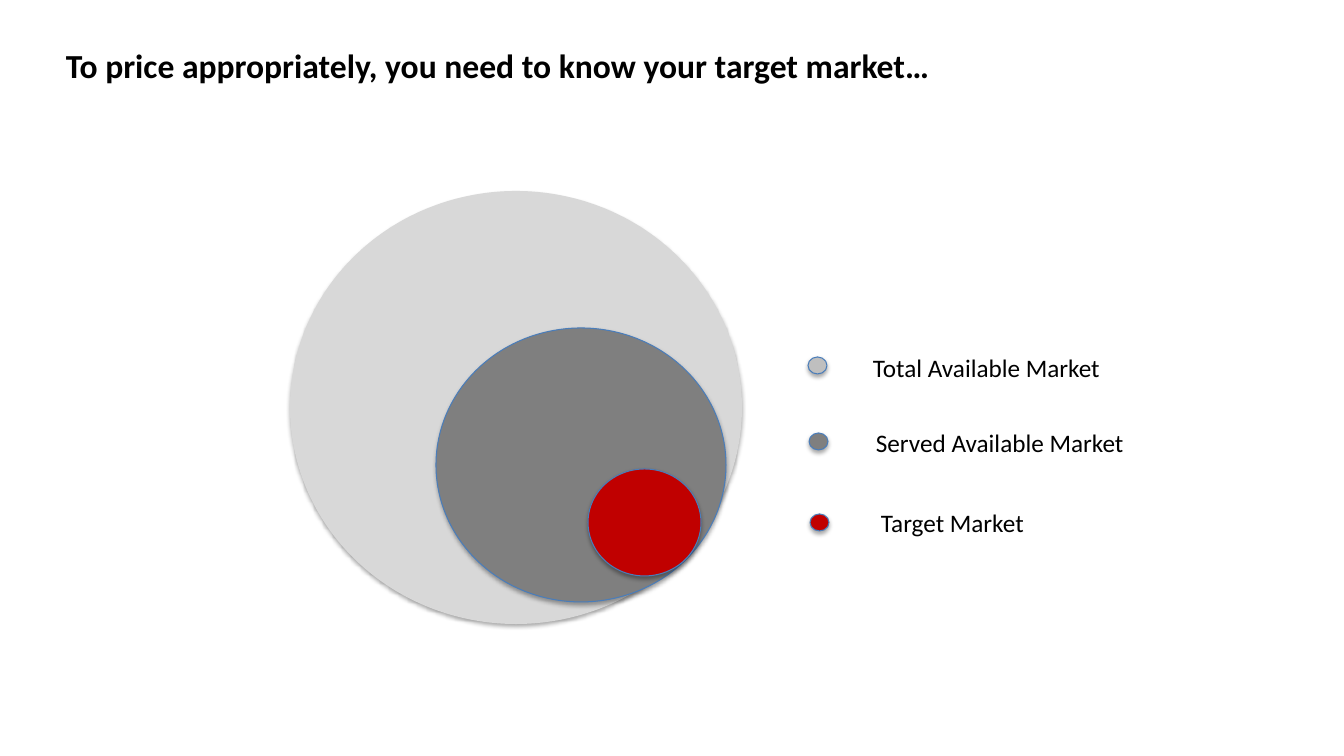
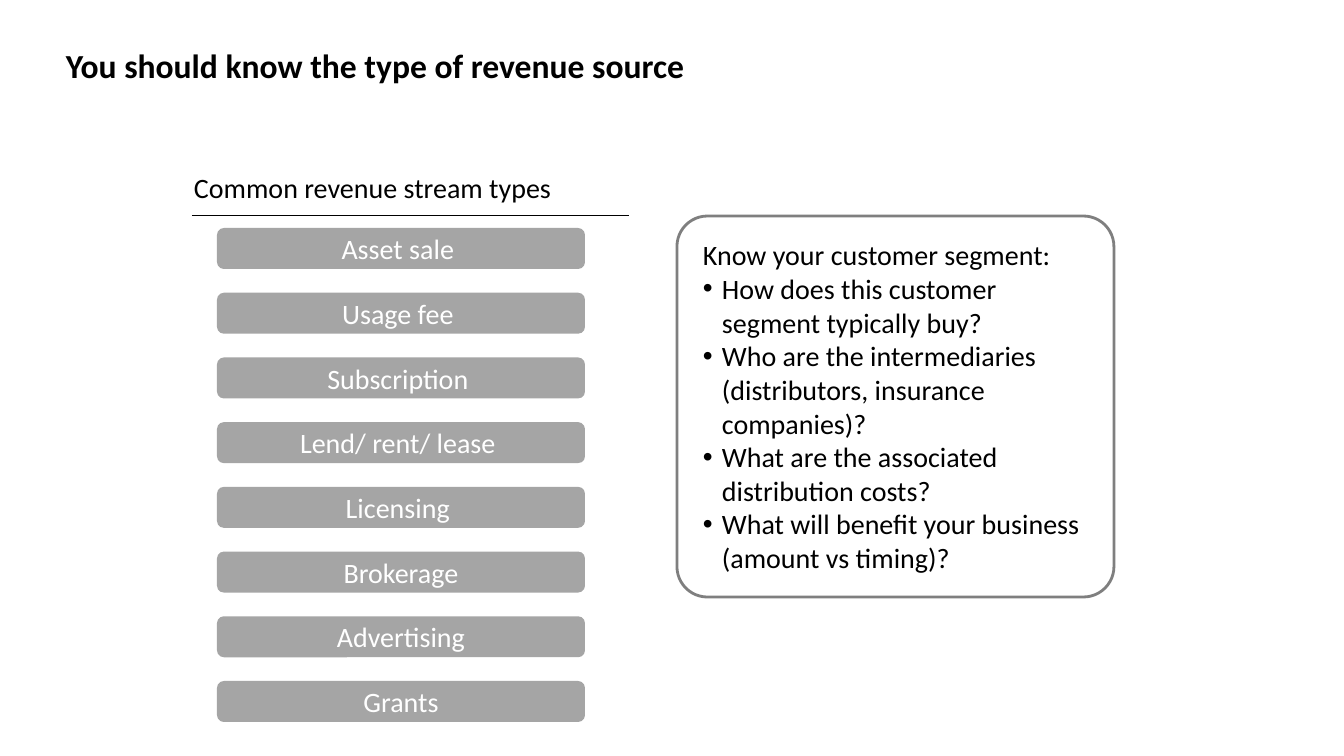
"""Build two slides on target markets and revenue sources."""
from lxml.etree import SubElement
from pptx import Presentation
from pptx.dml.color import RGBColor
from pptx.enum.shapes import MSO_CONNECTOR, MSO_SHAPE
from pptx.enum.text import MSO_ANCHOR, MSO_AUTO_SIZE, PP_ALIGN
from pptx.oxml.ns import qn
from pptx.util import Emu, Pt

FONT = "Calibri"
BLACK = RGBColor(0x00, 0x00, 0x00)
WHITE = RGBColor(0xFF, 0xFF, 0xFF)
PALE = RGBColor(0xD8, 0xD8, 0xD8)
SILVER = RGBColor(0xBF, 0xBF, 0xBF)
GRAY = RGBColor(0x7F, 0x7F, 0x7F)
STREAM_GRAY = RGBColor(0xA5, 0xA5, 0xA5)
RED = RGBColor(0xC0, 0x00, 0x00)
BLUE = RGBColor(0x4A, 0x7D, 0xBA)

SLIDE_SIZE = (1344, 756)
TITLE_BOX = (56, 40, 1253, 50)

MARKET_TITLE = "To price appropriately, you need to know your target market…"
MARKETS = [
    ((290, 191, 452, 433), PALE, None),
    ((436, 328, 290, 274), GRAY, BLUE),
    ((588, 469, 113, 107), RED, BLUE),
]
LEGEND = [
    ("Total Available Market", SILVER, (808, 357), (863, 347), 250),
    ("Served Available Market", GRAY, (809, 433), (866, 422), 271),
    ("Target Market", RED, (810, 514), (871, 502), 164),
]
MARKER_SIZE = (19, 17)
LABEL_HEIGHT = 40

REVENUE_TITLE = "You should know the type of revenue source"
STREAM_HEADING = "Common revenue stream types"
HEADING_BOX = (184, 166, 453, 44)
HEADING_RULE = (192, 216, 629, 216)
STREAMS = ["Asset sale ", "Usage fee ", "Subscription ", "Lend/ rent/ lease ",
           "Licensing ", "Brokerage", "Advertising", "Grants"]
STREAM_LEFT, STREAM_WIDTH, STREAM_HEIGHT = 217, 368, 41
FIRST_STREAM_TOP, LAST_STREAM_TOP = 228, 681
SEGMENT_HEADING = "Know your customer segment:"
SEGMENT_QUESTIONS = [
    "How does this customer segment typically buy?",
    "Who are the intermediaries (distributors, insurance companies)?",
    "What are the associated distribution costs?",
    "What will benefit your business (amount vs timing)?",
]
SEGMENT_FRAME = (677, 216, 437, 381)
SEGMENT_BOX = (693, 233, 414, 350)
BULLET_INDENT = 19


def px(length):
    return Emu(round(length * 914400 / 100.8))


def px_all(lengths):
    return [px(length) for length in lengths]


def style_font(paragraph, size, color, bold=False):
    font = paragraph.font
    font.name, font.size, font.bold = FONT, Pt(size), bold
    font.color.rgb = color


def add_outlined(slide, preset, box, fill, line, line_width=0.75):
    shape = slide.shapes.add_shape(preset, *px_all(box))
    shape.shadow.inherit = False
    if fill is None:
        shape.fill.background()
    else:
        shape.fill.solid()
        shape.fill.fore_color.rgb = fill
    if line is None:
        shape.line.fill.background()
    else:
        shape.line.color.rgb = line
        shape.line.width = Pt(line_width)
    return shape


def add_circle(slide, box, fill, line):
    circle = add_outlined(slide, MSO_SHAPE.OVAL, box, fill, line)
    effects = circle.element.spPr.find(qn("a:effectLst"))
    shadow = SubElement(effects, qn("a:outerShdw"), blurRad="40000",
                        dist="23000", dir="5400000", rotWithShape="0")
    tint = SubElement(shadow, qn("a:srgbClr"), val=str(BLACK))
    SubElement(tint, qn("a:alpha"), val="35000")


def add_text(slide, box, lines, size, bold=False):
    frame = slide.shapes.add_textbox(*px_all(box)).text_frame
    frame.word_wrap = True
    frame.auto_size = MSO_AUTO_SIZE.SHAPE_TO_FIT_TEXT
    frame.text = "\n".join(lines)
    for index, paragraph in enumerate(frame.paragraphs):
        if index:
            add_bullet(paragraph)
        style_font(paragraph, size, BLACK, bold)


def add_bullet(paragraph):
    properties = paragraph._p.get_or_add_pPr()
    properties.set("marL", str(px(BULLET_INDENT)))
    properties.set("indent", str(-px(BULLET_INDENT)))
    color = SubElement(properties, qn("a:buClr"))
    SubElement(color, qn("a:srgbClr"), val=str(BLACK))
    SubElement(properties, qn("a:buFont"), typeface="Arial")
    SubElement(properties, qn("a:buChar"), char="•")


def add_titled_slide(deck, title):
    slide = deck.slides.add_slide(deck.slide_layouts[6])
    add_text(slide, TITLE_BOX, [title], 24, bold=True)
    return slide


def add_stream(slide, name, top):
    box = (STREAM_LEFT, top, STREAM_WIDTH, STREAM_HEIGHT)
    pill = add_outlined(slide, MSO_SHAPE.ROUNDED_RECTANGLE, box, STREAM_GRAY, None)
    frame = pill.text_frame
    frame.text = name
    frame.vertical_anchor = MSO_ANCHOR.MIDDLE
    paragraph = frame.paragraphs[0]
    paragraph.alignment = PP_ALIGN.CENTER
    style_font(paragraph, 20, WHITE)


def build_market_slide(deck):
    slide = add_titled_slide(deck, MARKET_TITLE)
    for box, fill, line in MARKETS:
        add_circle(slide, box, fill, line)
    for label, color, marker_at, label_at, label_width in LEGEND:
        add_circle(slide, marker_at + MARKER_SIZE, color, BLUE)
        add_text(slide, label_at + (label_width, LABEL_HEIGHT), [label], 18)


def build_revenue_slide(deck):
    slide = add_titled_slide(deck, REVENUE_TITLE)
    add_text(slide, HEADING_BOX, [STREAM_HEADING], 20)
    rule = slide.shapes.add_connector(MSO_CONNECTOR.STRAIGHT, *px_all(HEADING_RULE))
    rule.line.color.rgb = BLACK
    rule.line.width = Pt(0.75)
    SubElement(rule.element.spPr, qn("a:effectLst"))

    pitch = (LAST_STREAM_TOP - FIRST_STREAM_TOP) / (len(STREAMS) - 1)
    for index, name in enumerate(STREAMS):
        add_stream(slide, name, FIRST_STREAM_TOP + index * pitch)

    segment = add_outlined(slide, MSO_SHAPE.ROUNDED_RECTANGLE, SEGMENT_FRAME, None, GRAY, 2)
    segment.adjustments[0] = 0.08
    add_text(slide, SEGMENT_BOX, [SEGMENT_HEADING] + SEGMENT_QUESTIONS, 20)


def main():
    deck = Presentation()
    deck.slide_width, deck.slide_height = px_all(SLIDE_SIZE)
    build_market_slide(deck)
    build_revenue_slide(deck)
    deck.save("out.pptx")


if __name__ == "__main__":
    main()
